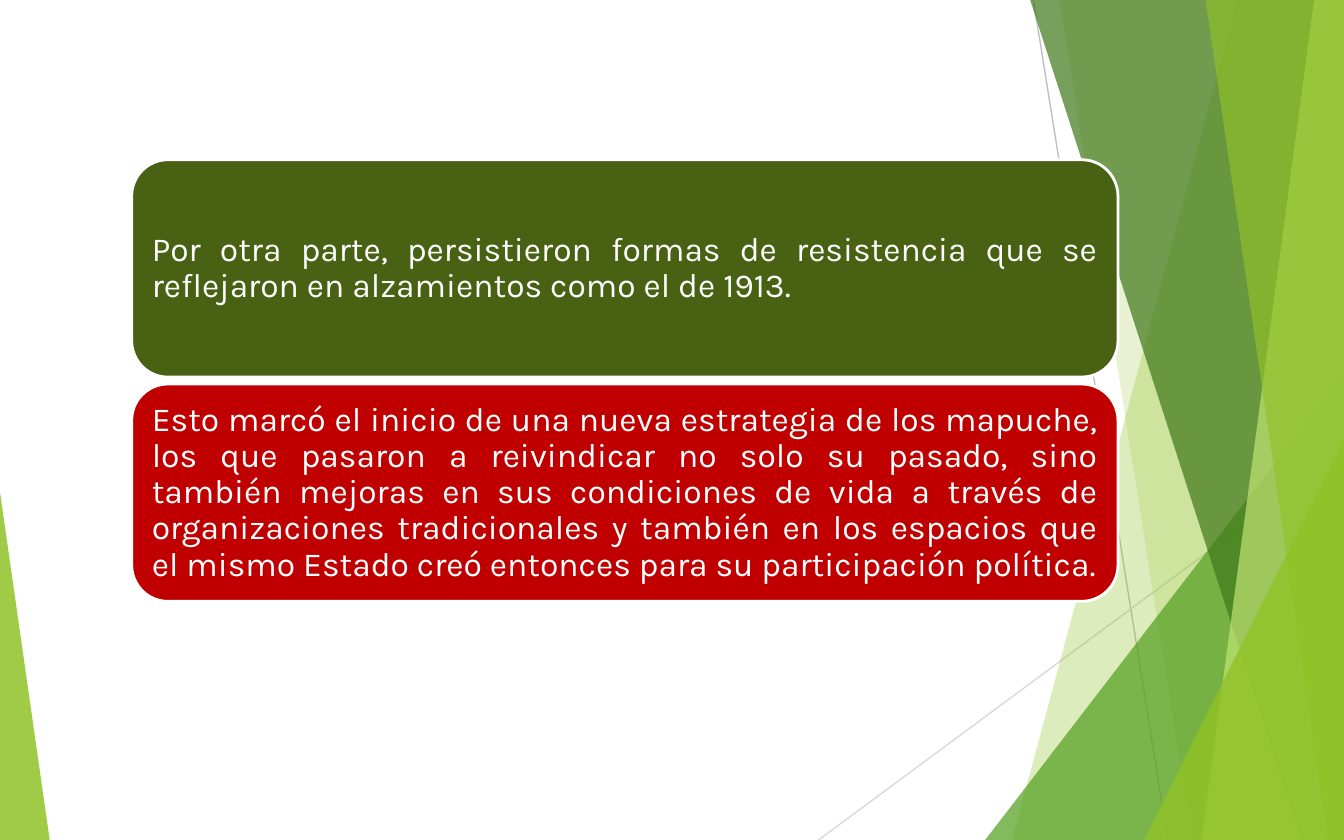
from pptx import Presentation
from pptx.dml.color import RGBColor
from pptx.enum.shapes import MSO_CONNECTOR as Connector, MSO_SHAPE as Shape
from pptx.enum.text import MSO_ANCHOR as Anchor, PP_ALIGN as Align
from pptx.oxml.ns import qn
from pptx.util import Cm, Pt
from lxml.etree import SubElement

WIDTH, HEIGHT = 25.4, 15.88
COLOURS = {
    "white": "FFFFFF", "silver": "BFBFBF", "pale grey": "D9D9D9",
    "lime": "90C226", "pale lime": "C0E474", "green": "54A021",
    "forest": "3F7819", "olive": "486113", "red": "C00000",
}
MESSAGES = [
    ("olive", "Por otra parte, persistieron formas de resistencia que se "
              "reflejaron en alzamientos como el de 1913."),
    ("red", "Esto marcó el inicio de una nueva estrategia de los mapuche, los "
            "que pasaron a reivindicar no solo su pasado, sino también mejoras "
            "en sus condiciones de vida a través de organizaciones "
            "tradicionales y también en los espacios que el mismo Estado creó "
            "entonces para su participación política."),
]


class SlideBuilder:
    frame_format = {
        "word_wrap": True, "vertical_anchor": Anchor.MIDDLE,
        "margin_left": Cm(0.18), "margin_right": Cm(0.18),
        "margin_top": Cm(0.18), "margin_bottom": Cm(0.18),
    }
    paragraph_format = {"alignment": Align.JUSTIFY, "line_spacing": 0.9}
    font_format = {"name": "Karla", "size": Pt(18)}

    def __init__(self, slide):
        self.slide = slide
        self.shapes = slide.shapes

    @staticmethod
    def colour(name):
        return RGBColor.from_string(COLOURS[name])

    @staticmethod
    def apply(target, values):
        for name, value in values.items():
            setattr(target, name, value)

    def paint(self, shape, colour, opacity=100):
        """Give a flat fill without outline or shadow; opacity in percent."""
        shape.shadow.inherit = False
        shape.line.fill.background()
        shape.fill.solid()
        shape.fill.fore_color.rgb = self.colour(colour)
        if opacity < 100:
            fill = shape.fill._xPr.find(qn("a:solidFill"))
            SubElement(fill[0], qn("a:alpha"), val=str(opacity * 1000))

    def line(self, start, end, colour):
        connector = self.shapes.add_connector(
            Connector.STRAIGHT, *(Cm(value) for value in (*start, *end)))
        connector.line.color.rgb = self.colour(colour)
        connector.line.width = Pt(0.75)
        SubElement(connector._element.spPr, qn("a:effectLst"))

    def band(self, top_left, bottom_left, colour, opacity):
        """Fill from a slanted left side to the right edge of the slide."""
        points = [(Cm(x), Cm(y)) for x, y in (
            (top_left, -0.03), (WIDTH, -0.03),
            (WIDTH, HEIGHT), (bottom_left, HEIGHT))]
        outline = self.shapes.build_freeform(*points[0])
        outline.add_line_segments(points[1:], close=True)
        self.paint(outline.convert_to_shape(), colour, opacity)

    def corner(self, left, top, width, apex, colour, opacity):
        """Triangle standing on the bottom edge of the slide."""
        triangle = self.shapes.add_shape(
            Shape.ISOSCELES_TRIANGLE,
            Cm(left), Cm(top), Cm(width), Cm(HEIGHT - top))
        triangle.adjustments[0] = apex
        self.paint(triangle, colour, opacity)

    def message(self, left, top, width, height, colour, text):
        box = self.shapes.add_shape(
            Shape.ROUNDED_RECTANGLE, Cm(left), Cm(top), Cm(width), Cm(height))
        self.paint(box, colour)
        box.line.color.rgb = self.colour("white")
        box.line.width = Pt(1.5)
        frame = box.text_frame
        self.apply(frame, self.frame_format)
        paragraph = frame.paragraphs[0]
        self.apply(paragraph, self.paragraph_format)
        run = paragraph.add_run()
        run.text = text
        self.apply(run.font, self.font_format)
        run.font.color.rgb = self.colour("white")


def draw_background(builder):
    builder.line((19.53, 0), (22.07, HEIGHT), "silver")
    builder.line((WIDTH, 8.53), (15.47, HEIGHT), "pale grey")
    builder.band(23.39, 19.13, "lime", 30)
    builder.band(20.02, 22.53, "lime", 20)
    builder.corner(18.62, 7.06, 6.78, 1, "green", 72)
    builder.band(19.46, 24.59, "forest", 70)
    builder.band(24.84, 22.71, "pale lime", 70)
    builder.band(22.78, 25.1, "lime", 65)
    builder.corner(21.62, 8.31, 3.78, 1, "lime", 80)
    builder.corner(0, 9.3, 0.94, 0, "lime", 85)


def main():
    presentation = Presentation()
    presentation.slide_width = Cm(WIDTH)
    presentation.slide_height = Cm(HEIGHT)
    slide = presentation.slides.add_slide(presentation.slide_layouts[6])
    builder = SlideBuilder(slide)
    draw_background(builder)
    top, height, gap = 3.02, 4.11, 0.13
    for index, (colour, text) in enumerate(MESSAGES):
        builder.message(2.49, top + index * (height + gap), 18.64, height,
                        colour, text)
    presentation.save("out.pptx")


if __name__ == "__main__":
    main()
